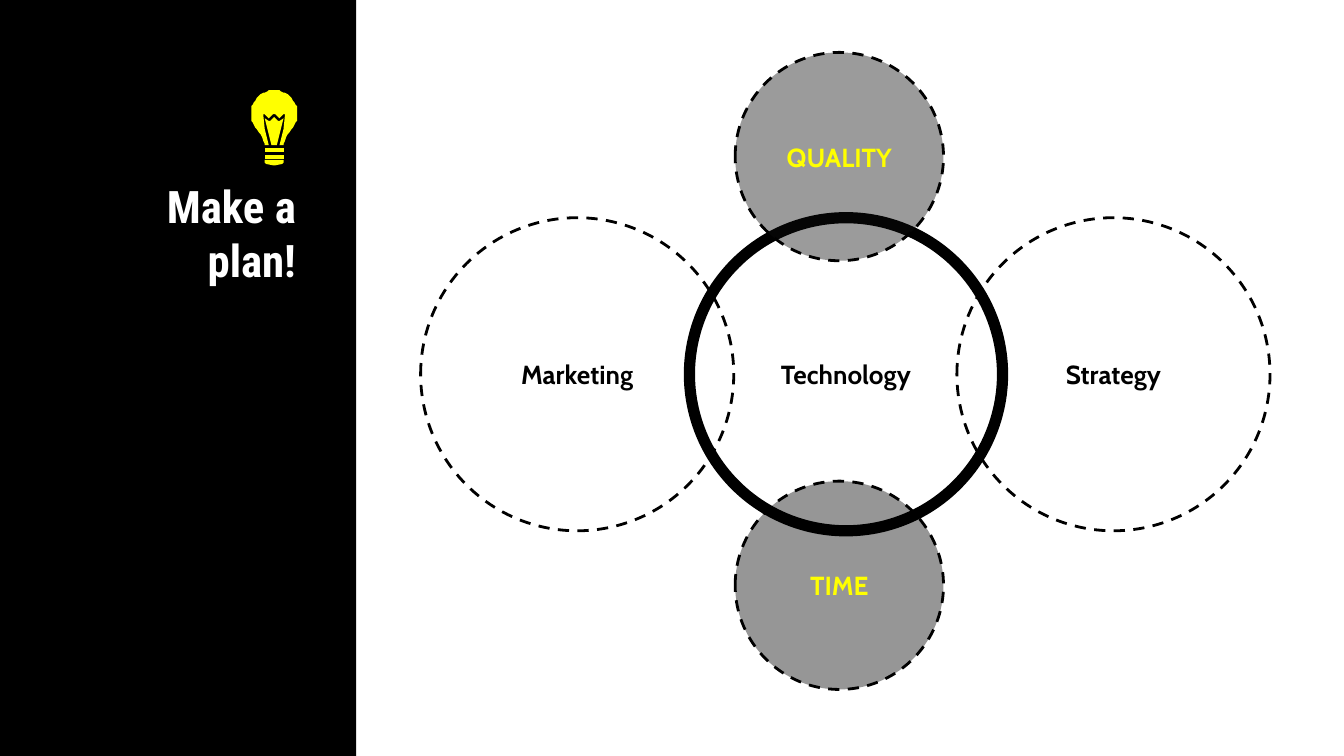
"""Build a slide with a plan heading, a light bulb and five linked circles."""
from lxml.etree import SubElement
from pptx import Presentation
from pptx.dml.color import RGBColor
from pptx.enum.dml import MSO_LINE
from pptx.enum.shapes import MSO_SHAPE
from pptx.enum.text import MSO_ANCHOR, PP_ALIGN
from pptx.oxml.ns import qn
from pptx.util import Inches, Pt

HUES = {"black": "000000", "soot": "0D0D0D", "white": "FFFFFF", "yellow": "FFFF00"}


def paint(shape, hue):
    shape.shadow.inherit = False
    shape.fill.solid()
    shape.fill.fore_color.rgb = RGBColor.from_string(HUES[hue])


def write(shape, text, hue, align, anchor, font):
    frame = shape.text_frame
    inset = Inches(0.1)
    box = {"word_wrap": True, "vertical_anchor": anchor, "margin_left": inset,
           "margin_right": inset, "margin_top": inset, "margin_bottom": inset}
    for key, value in box.items():
        setattr(frame, key, value)
    line = frame.paragraphs[0]
    line.alignment = align
    run = line.add_run()
    run.text = text
    for key, value in font.items():
        setattr(run.font, key, value)
    run.font.color.rgb = RGBColor.from_string(HUES[hue])


deck = Presentation()
deck.slide_width = Inches(10)
deck.slide_height = Inches(10) * 9 // 16
slide = deck.slides.add_slide(deck.slide_layouts[6])
shapes = slide.shapes

panel = shapes.add_shape(MSO_SHAPE.RECTANGLE, 0, 0, Inches(2.65), deck.slide_height)
paint(panel, "black")
panel.line.fill.background()

title = shapes.add_textbox(Inches(0.44), Inches(1.23), Inches(1.86), Inches(2.41))
write(title, "Make a plan!", "white", PP_ALIGN.RIGHT, MSO_ANCHOR.TOP,
      {"name": "Roboto Condensed", "size": Pt(24), "bold": True})

MID = 2.04
halves = [
    [(1.97, 1.15), (1.97, 1.18)],
    [(1.97, 1.1), (1.97, 1.13)],
    [(1.97, 1.19), (1.97, 1.21), (1.98, 1.22), (2.03, 1.23)],
    [(2.04, 0.87), (2.01, 0.9), (2, 0.9), (1.97, 0.88), (2.02, 1.08)],
    [(2.04, 0.67), (2.02, 0.67), (2, 0.67), (1.99, 0.68), (1.97, 0.69),
     (1.96, 0.69), (1.94, 0.7), (1.93, 0.71), (1.92, 0.72), (1.91, 0.73),
     (1.9, 0.75), (1.89, 0.76), (1.88, 0.78), (1.87, 0.79), (1.87, 0.81),
     (1.87, 0.84), (1.87, 0.88), (1.87, 0.9), (1.88, 0.91), (1.89, 0.93),
     (1.9, 0.95), (1.91, 0.96), (1.93, 0.99), (1.94, 1), (1.95, 1.02),
     (1.96, 1.05), (1.97, 1.07), (1.97, 1.08), (2, 1.08), (1.97, 0.96),
     (1.96, 0.86), (1.96, 0.85), (1.97, 0.85), (2, 0.88), (2.03, 0.85),
     (2.04, 0.85)],
]
bulb = shapes.add_group_shape()
for half in halves:
    whole = half + [(2 * MID - x, y) for x, y in reversed(half)]
    points = [(Inches(x), Inches(y)) for x, y in whole]
    pen = bulb.shapes.build_freeform(*points[0])
    pen.add_line_segments(points[1:], close=True)
    part = pen.convert_to_shape()
    paint(part, "yellow")
    part.line.fill.background()

BIG, SMALL = 2.33, 1.55
label = {"name": "Cabin", "size": Pt(14), "bold": True}
dashed = {"width": Pt(1.5), "dash_style": MSO_LINE.DASH}
rings = [
    ("Technology", 5.13, 1.62, BIG, None, "black", {"width": Pt(6)}),
    ("Marketing", 3.13, 1.62, BIG, None, "black", dashed),
    ("Strategy", 7.12, 1.62, BIG, None, "black", dashed),
    ("QUALITY", 5.47, 0.39, SMALL, "soot", "yellow", dashed),
    ("TIME", 5.47, 3.58, SMALL, "black", "yellow", dashed),
]
for text, left, top, size, fill, hue, edge in rings:
    ring = shapes.add_shape(MSO_SHAPE.OVAL, Inches(left), Inches(top),
                            Inches(size), Inches(size))
    if fill:
        paint(ring, fill)
        tint = ring.element.spPr.find(qn("a:solidFill"))[0]
        SubElement(tint, qn("a:alpha"), val="41000")
    else:
        ring.shadow.inherit = False
        ring.fill.background()
    ring.line.color.rgb = RGBColor.from_string(HUES["black"])
    for key, value in edge.items():
        setattr(ring.line, key, value)
    write(ring, text, hue, PP_ALIGN.CENTER, MSO_ANCHOR.MIDDLE, label)

deck.save("out.pptx")
